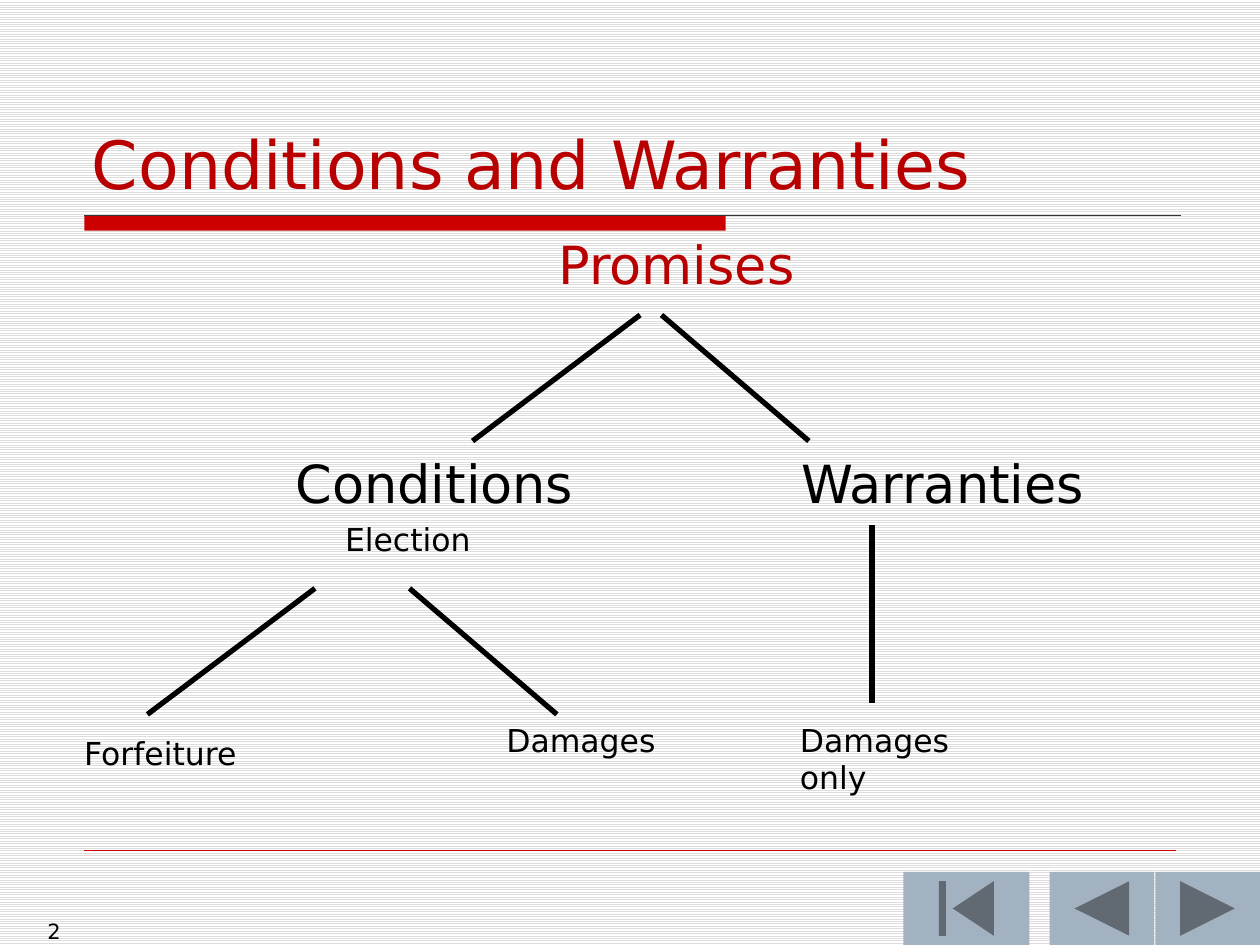
"""Build the Conditions and Warranties tree slide."""
from lxml.etree import SubElement
from pptx import Presentation
from pptx.dml.color import RGBColor
from pptx.enum.dml import MSO_PATTERN
from pptx.enum.shapes import MSO_CONNECTOR, MSO_SHAPE as Shape
from pptx.enum.text import MSO_ANCHOR, MSO_AUTO_SIZE, PP_ALIGN as Align
from pptx.oxml.ns import qn
from pptx.util import Inches, Pt

THEME = {
    "font": "DejaVu Sans",
    "title": 38, "branch": 30, "leaf": 18, "number": 12,
    "heading": "B90000", "ink": "000000", "accent": "CC0000",
    "rule": "333333", "button": "A3B2C1", "stripe": "DDDDDD", "paper": "FFFFFF",
}

TITLE = ("Conditions and Warranties", (0.63, 0.33, 8.75, 1.33))

LABELS = [
    ("2", (0, 7.24, 0.58, 0.26), "number", "ink", Align.RIGHT),
    ("Promises", (4.17, 1.79, 2.4, 0.58), "branch", "heading", Align.CENTER),
    ("Conditions", (2.25, 3.53, 2.6, 0.58), "branch", "ink", Align.LEFT),
    ("Warranties", (6.26, 3.53, 2.7, 0.58), "branch", "ink", Align.LEFT),
    ("Election", (2.64, 4.08, 1.4, 0.4), "leaf", "ink", Align.LEFT),
    ("Forfeiture", (0.57, 5.78, 1.5, 0.4), "leaf", "ink", Align.LEFT),
    ("Damages", (3.92, 5.67, 1.5, 0.4), "leaf", "ink", Align.LEFT),
    ("Damages only", (6.25, 5.67, 1.6, 0.7), "leaf", "ink", Align.LEFT),
]

RULES = [
    ((0.67, 1.71), (9.37, 1.71), "rule", 0.75),
    ((0.67, 6.75), (9.33, 6.75), "accent", 0.25),
]

BRANCHES = [
    ((5.08, 2.5), (3.75, 3.5)),
    ((5.25, 2.5), (6.42, 3.5)),
    ((2.5, 4.67), (1.17, 5.67)),
    ((3.25, 4.67), (4.42, 5.67)),
    ((6.92, 4.17), (6.92, 5.58)),
]

BLOCKS = [
    (Shape.RECTANGLE, (0.67, 1.71, 5.09, 0.12), "accent"),
    (Shape.ACTION_BUTTON_BACK_OR_PREVIOUS, (8.33, 6.92, 0.83, 0.58), "button"),
    (Shape.ACTION_BUTTON_BEGINNING, (7.17, 6.92, 1, 0.58), "button"),
    (Shape.ACTION_BUTTON_FORWARD_OR_NEXT, (9.17, 6.92, 0.83, 0.58), "button"),
]


def color(name):
    return RGBColor.from_string(THEME[name])


def box(place):
    return [Inches(length) for length in place]


def write(frame, text, size, ink, align, anchor=MSO_ANCHOR.TOP):
    frame.text = text
    layout = {"word_wrap": True, "auto_size": MSO_AUTO_SIZE.NONE, "vertical_anchor": anchor}
    for key, value in layout.items():
        setattr(frame, key, value)
    paragraph = frame.paragraphs[0]
    paragraph.alignment = align
    font = paragraph.runs[0].font
    for key, value in {"name": THEME["font"], "size": Pt(THEME[size])}.items():
        setattr(font, key, value)
    font.color.rgb = color(ink)


def add_block(slide, kind, place, fill):
    block = slide.shapes.add_shape(kind, *box(place))
    block.shadow.inherit = False
    block.fill.solid()
    block.fill.fore_color.rgb = color(fill)
    block.line.fill.background()


def add_line(slide, start, end, ink, width):
    line = slide.shapes.add_connector(MSO_CONNECTOR.STRAIGHT, *box(start + end))
    line.line.color.rgb = color(ink)
    line.line.width = Pt(width)
    SubElement(line._element.spPr, qn("a:effectLst"))


def main():
    deck = Presentation()
    deck.slide_width, deck.slide_height = Inches(10), Inches(7.5)
    slide = deck.slides.add_slide(deck.slide_layouts[5])

    backdrop = slide.background.fill
    backdrop.patterned()
    backdrop.pattern = MSO_PATTERN.LIGHT_HORIZONTAL
    backdrop.fore_color.rgb = color("stripe")
    backdrop.back_color.rgb = color("paper")

    heading, place = TITLE
    title = slide.shapes.title
    for side, value in zip(("left", "top", "width", "height"), box(place)):
        setattr(title, side, value)
    write(title.text_frame, heading, "title", "heading", Align.LEFT, MSO_ANCHOR.BOTTOM)

    for block in BLOCKS:
        add_block(slide, *block)
    for rule in RULES:
        add_line(slide, *rule)
    for start, end in BRANCHES:
        add_line(slide, start, end, "ink", 3)
    for text, place, size, ink, align in LABELS:
        label = slide.shapes.add_textbox(*box(place))
        write(label.text_frame, text, size, ink, align)

    deck.save("out.pptx")


if __name__ == "__main__":
    main()
